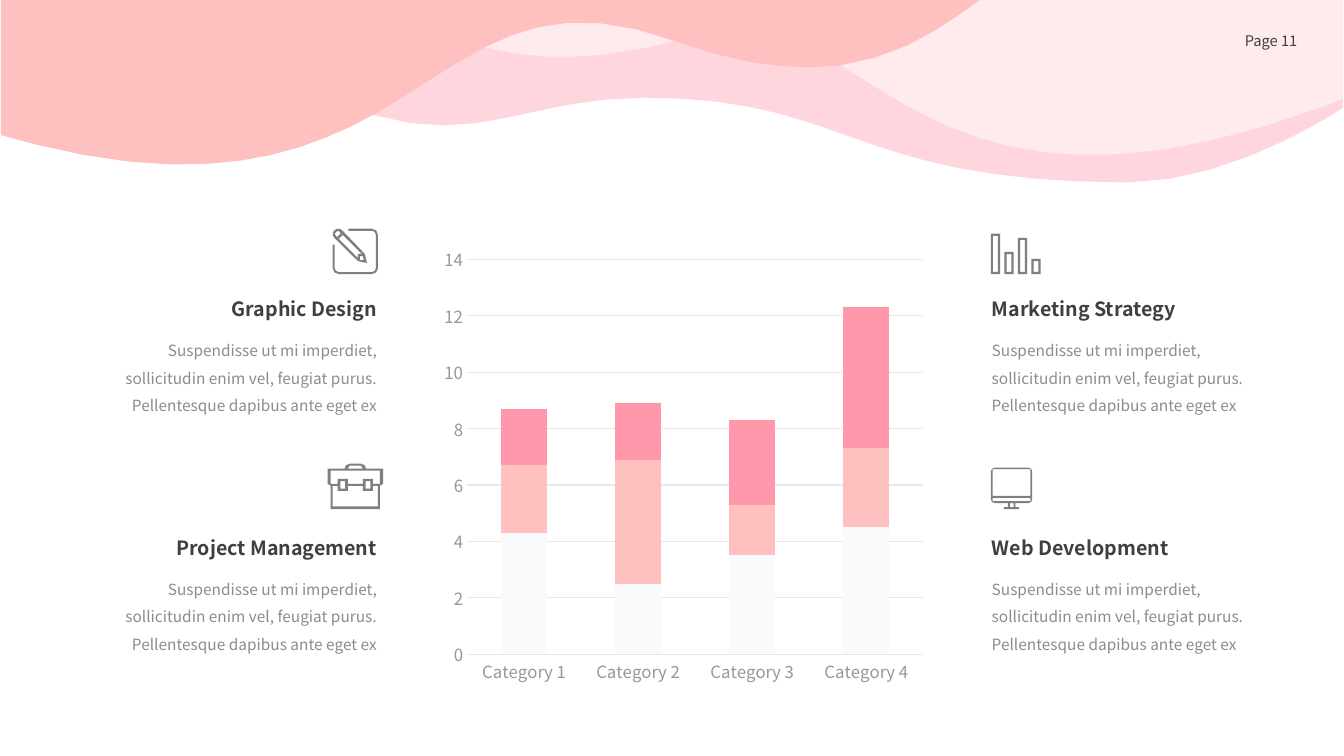
from dataclasses import dataclass
from math import ceil, cos, dist, pi, sin

from lxml.etree import SubElement
from pptx import Presentation
from pptx.chart.data import CategoryChartData
from pptx.dml.color import RGBColor as RGB
from pptx.enum.chart import XL_CHART_TYPE as ChartType, XL_TICK_MARK as Tick
from pptx.enum.text import MSO_ANCHOR as Anchor, MSO_AUTO_SIZE as Fit, PP_ALIGN as Align
from pptx.oxml.ns import qn
from pptx.util import Pt


@dataclass(frozen=True)
class Theme:
    font: str = "Noto Sans CJK SC"
    dark: str = "3F3F3F"
    muted: str = "8C8C8C"
    label: str = "979797"
    icon: str = "7F7F7F"
    grid: str = "E7E7E7"
    waves: tuple = ("FFD6DD", "FFEAEE", "FFC0C0")
    series: tuple = ("F9FAFC", "FFC0C0", "FF98AB")
    heading_size: float = 14
    body_size: float = 11
    page_size: float = 10.5
    axis_size: float = 12


# Outline geometry, in points
def bezier(start, c1, c2, end):
    steps = max(3, ceil(dist(start, end) / 25))
    for i in range(1, steps + 1):
        t = i / steps
        u = 1 - t
        yield tuple(u**3 * a + 3 * u * u * t * b + 3 * u * t * t * c + t**3 * d
                    for a, b, c, d in zip(start, c1, c2, end))


def curve(corners, segments):
    points = list(corners)
    for segment in segments:
        points += bezier(points[-1], *segment)
    return points


def rounded(x, y, w, h, r=0.0):
    """Corners in the order top left, top right, bottom right, bottom left."""
    centres = [(x + r, y + r), (x + w - r, y + r),
               (x + w - r, y + h - r), (x + r, y + h - r)]
    if not r:
        return centres
    return [(cx + r * cos(pi + (k + i / 2) * pi / 2),
             cy + r * sin(pi + (k + i / 2) * pi / 2))
            for k, (cx, cy) in enumerate(centres) for i in range(3)]


def reflect(points, axis):
    return [(2 * axis - x, y) for x, y in reversed(points)]


def apply(target, **values):
    for attribute, value in values.items():
        setattr(target, attribute, value)


class SlideBuilder:
    def __init__(self, slide, theme):
        self.slide, self.theme = slide, theme

    def style_font(self, font, size, colour, bold=False):
        apply(font, name=self.theme.font, size=Pt(size), bold=bold)
        font.color.rgb = RGB.from_string(colour)

    def text(self, words, box, size, colour, bold=False, holder=None,
             frame_format=None, **paragraph_format):
        holder = holder or self.slide.shapes.add_textbox(0, 0, 0, 0)
        apply(holder, **dict(zip(("left", "top", "width", "height"), map(Pt, box))))
        frame = holder.text_frame
        apply(frame, **{"word_wrap": True, "auto_size": Fit.NONE,
                        "vertical_anchor": Anchor.TOP, **(frame_format or {})})
        paragraph = frame.paragraphs[0]
        apply(paragraph, text=words, **paragraph_format)
        self.style_font(paragraph.runs[0].font, size, colour, bold)
        properties = paragraph._p.get_or_add_pPr()
        for key in ("marL", "indent"):
            properties.set(key, "0")
        SubElement(properties, qn("a:buNone"))

    def outline(self, contours, colour):
        contours = [[(Pt(x), Pt(y)) for x, y in contour] for contour in contours]
        builder = self.slide.shapes.build_freeform(*contours[0][0], scale=1)
        for i, (first, *rest) in enumerate(contours):
            if i:
                builder.move_to(*first)
            builder.add_line_segments(rest, close=True)
        shape = builder.convert_to_shape()
        shape.shadow.inherit = False
        shape.fill.solid()
        shape.fill.fore_color.rgb = RGB.from_string(colour)
        shape.line.fill.background()

    def stacked_chart(self, categories, series, box):
        theme = self.theme
        data = CategoryChartData()
        data.categories = categories
        for name, values in series.items():
            data.add_series(name, values)
        chart = self.slide.shapes.add_chart(
            ChartType.COLUMN_STACKED, *map(Pt, box), data).chart
        apply(chart, has_legend=False, has_title=False)
        self.style_font(chart.font, theme.axis_size, theme.label)
        plot = chart.plots[0]
        apply(plot, gap_width=150, overlap=100, vary_by_categories=False)
        for column, colour in zip(plot.series, theme.series):
            column.format.fill.solid()
            column.format.fill.fore_color.rgb = RGB.from_string(colour)
        for axis in (chart.category_axis, chart.value_axis):
            apply(axis, major_tick_mark=Tick.NONE, minor_tick_mark=Tick.NONE)
            self.style_font(axis.tick_labels.font, theme.axis_size, theme.label)
        apply(chart.value_axis, minimum_scale=0, maximum_scale=14, major_unit=2,
              has_major_gridlines=True)
        chart.value_axis.format.line.fill.background()
        for rule in (chart.category_axis, chart.value_axis.major_gridlines):
            rule.format.line.width = Pt(0.75)
            rule.format.line.color.rgb = RGB.from_string(theme.grid)


# Header waves: straight corners, then curve segments from the last corner
WAVES = [
    ([(0.7, 0), (959.4, 0), (959.4, 77)],
     [((949.7, 83.5), (876.2, 130.3), (805.7, 130.3)),
      ((607.7, 130.3), (607.7, 69.8), (460.8, 69.8)),
      ((376.6, 69.8), (343.4, 104.4), (266.4, 82.1)),
      ((246.2, 75.6), (222.5, 65.5), (194.4, 49.7))]),
    ([(263.5, 0), (959.4, 0), (959.4, 70.6), (940.3, 77.8)],
     [((740.2, 150.5), (664.6, 85.7), (599.8, 46.1)),
      ((568.1, 27.4), (539.3, 13.7), (500.4, 24.5)),
      ((494.6, 26.6), (488.2, 28.1), (482.4, 29.5)),
      ((428.4, 42.5), (388.8, 44.6), (346.3, 33.8)),
      ((325.4, 28.1), (303.1, 19.4), (277.9, 7.2))]),
    ([(0.7, 96.5), (0.7, 0), (699.8, 0), (689, 7.9)],
     [((663.1, 26.6), (635, 41.8), (599.8, 46.8)),
      ((568.1, 50.4), (529.9, 46.8), (482.4, 29.5)),
      ((421.9, 7.2), (383, 15.1), (346.3, 33.8)),
      ((320.4, 46.8), (295.9, 65.5), (266.4, 82.1)),
      ((213.1, 111.6), (144.7, 133.2), (24.5, 103))]),
]


# Icons, each a list of contours
def pencil_icon():
    def open_frame(inset, r):
        side = 32.4 - 2 * inset
        x, y = 237.6 + inset, 163.4 + inset
        return [(248.9, y), *rounded(x, y, side, side, r)[3:], (x, 174.8)]

    return [
        open_frame(0, 4.3) + open_frame(1.5, 2.8)[::-1],
        curve([(262.1, 187.9), (255.6, 186.5), (238.8, 169.9)],
              [((237.2, 168.3), (237.2, 166), (238.8, 164.6)),
               ((240.4, 163), (242.6, 163), (244.1, 164.2))]) + [(260.6, 181.4)],
        [(244.8, 167.8), (241.9, 170.6), (255.6, 184.3), (255.6, 181.4), (258.5, 181.4)],
        [(259.2, 182.9), (257, 182.9), (257, 185.8), (259.9, 185.8)],
        [(242.6, 165.6), (241.2, 164.9), (239, 167), (240.7, 169.5), (243.4, 166.6)],
    ]


def bars_icon():
    contours = []
    for i, top in enumerate((167, 180, 169.9, 185)):
        left, height = 707.8 + 9.65 * i, 195.8 - top
        contours += [rounded(left, top, 6.5, height),
                     rounded(left + 1.5, top + 1.5, 3.5, height - 3)]
    return contours


def briefcase_icon():
    axis = 253.8
    halves = [
        [(236.2, 363.6), (236.2, 347), (234, 345.6), (234, 334.8),
         (246.2, 334.8), (247, 332.4), (249.8, 331.2)],
        [(236.2, 336.2), (236.2, 345.6), (241.2, 345.6), (241.2, 342),
         (248.4, 342), (248.4, 345.6)],
        [(237.6, 361.7), (237.6, 347), (241.2, 347), (241.2, 350.6),
         (248.4, 350.6), (248.4, 347)],
        [(248.4, 334.8), (249.8, 332.6)],
    ]
    clasp = rounded(243.1, 343.6, 3.4, 5.5)
    return [half + reflect(half, axis) for half in halves] + [clasp, reflect(clasp, axis)]


def monitor_icon():
    return [rounded(707.8, 334.1, 29.5, 25.2, 2.6), rounded(709.1, 335.2, 26.9, 19),
            rounded(709.1, 355.6, 26.9, 2.3), rounded(720, 359.3, 1.3, 2.9),
            rounded(724, 359.3, 1.3, 2.9), rounded(717.1, 362.2, 10.8, 1.4)]


DESCRIPTION = ("Suspendisse ut mi imperdiet, sollicitudin enim vel, feugiat purus. "
               "Pellentesque dapibus ante eget ex")
TOPICS = ["Graphic Design", "Marketing Strategy", "Project Management", "Web Development"]
COLUMNS = [(64.1, Align.RIGHT), (701.3, Align.LEFT)]


def main():
    deck = Presentation()
    apply(deck, slide_width=Pt(960), slide_height=Pt(540))
    slide = deck.slides.add_slide(deck.slide_layouts[4])
    theme = Theme()
    page = SlideBuilder(slide, theme)
    title, *topic_holders = list(slide.placeholders)[:5]
    title.element.getparent().remove(title.element)

    # Header
    for wave, colour in zip(WAVES, theme.waves):
        page.outline([curve(*wave)], colour)
    page.text("Page 11", (717.8, 14.4, 216, 28.8), theme.page_size, theme.dark,
              frame_format={"vertical_anchor": Anchor.MIDDLE}, alignment=Align.RIGHT)

    # Topics in two columns and two rows
    for i, (topic, holder) in enumerate(zip(TOPICS, topic_holders)):
        row, column = divmod(i, 2)
        left, alignment = COLUMNS[column]
        top = 208.8 + 170.6 * row
        page.text(topic, (left, top, 212.4, 24.5), theme.heading_size, theme.dark, True,
                  holder, alignment=alignment, space_before=Pt(10))
        page.text(DESCRIPTION, (left, top + 24.5, 212.4, 73.4), theme.body_size,
                  theme.muted, frame_format={"auto_size": Fit.TEXT_TO_FIT_SHAPE},
                  alignment=alignment, space_before=Pt(10), line_spacing=1.5)

    # Chart
    page.stacked_chart([f"Category {n}" for n in range(1, 5)],
                       {"Series 1": (4.3, 2.5, 3.5, 4.5),
                        "Series 2": (2.4, 4.4, 1.8, 2.8),
                        "Series 3": (2, 2, 3, 5)},
                       (310.3, 169.9, 356.4, 324.7))

    # Icons
    for icon in (pencil_icon, bars_icon, briefcase_icon, monitor_icon):
        page.outline(icon(), theme.icon)
    deck.save("out.pptx")


if __name__ == "__main__":
    main()
